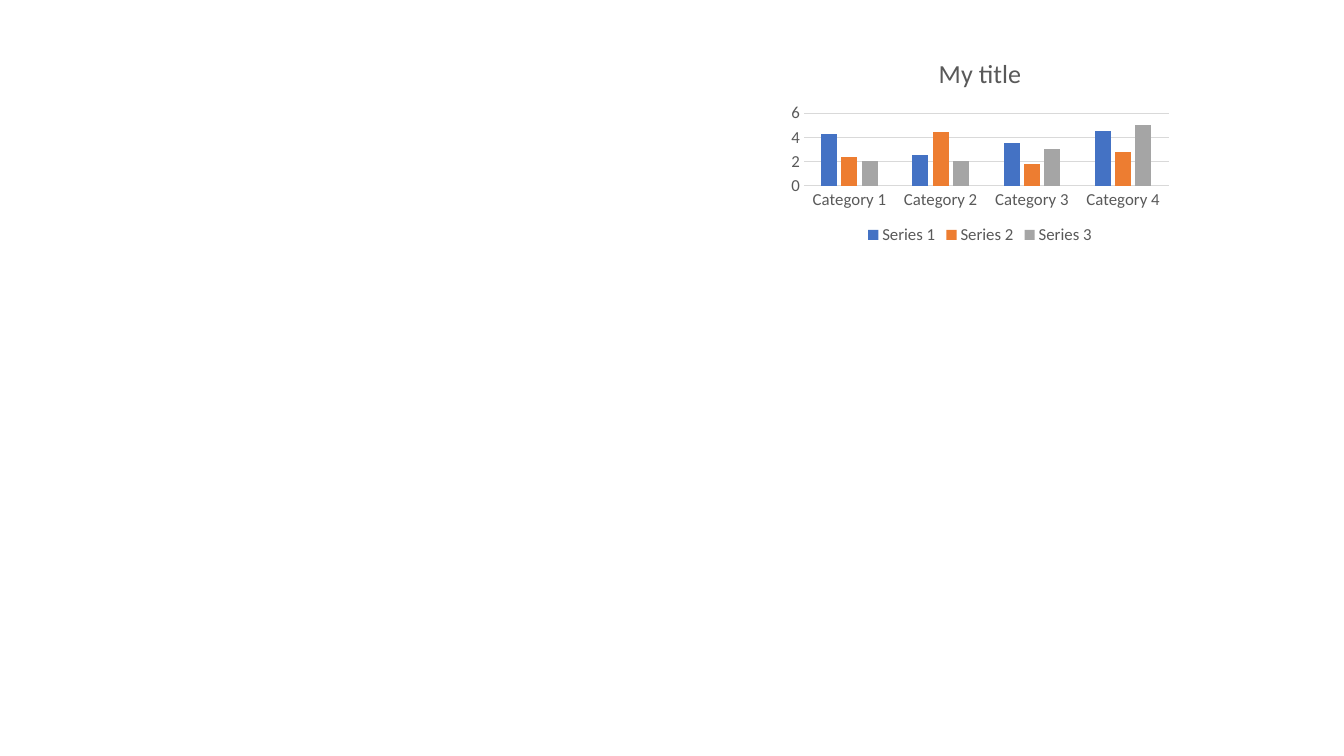
from pptx import Presentation
from pptx.chart.data import CategoryChartData
from pptx.dml.color import RGBColor
from pptx.enum.chart import XL_CHART_TYPE as ChartType
from pptx.enum.chart import XL_LEGEND_POSITION as LegendPosition
from pptx.enum.chart import XL_TICK_MARK as TickMark
from pptx.util import Inches, Pt

THEME = {
    "font": "Calibri",
    "text": RGBColor.from_string("595959"),
    "line": RGBColor.from_string("D9D9D9"),
    "label_size": Pt(12),
    "title_size": Pt(18.6),
    "line_width": Pt(0.75),
}
SERIES = {
    "Series 1": ("4472C4", (4.3, 2.5, 3.5, 4.5)),
    "Series 2": ("ED7D31", (2.4, 4.4, 1.8, 2.8)),
    "Series 3": ("A5A5A5", (2, 2, 3, 5)),
}


def set_values(target, values):
    for name, value in values.items():
        setattr(target, name, value)


def style_font(font, size):
    set_values(font, {"name": THEME["font"], "size": size, "bold": False})
    font.color.rgb = THEME["text"]


presentation = Presentation()
set_values(presentation, {"slide_width": Inches(13.33), "slide_height": Inches(7.5)})
slide = presentation.slides.add_slide(presentation.slide_layouts[6])

chart_data = CategoryChartData()
chart_data.categories = [f"Category {number}" for number in range(1, 5)]
for name, (color, values) in SERIES.items():
    chart_data.add_series(name, values)

chart = slide.shapes.add_chart(
    ChartType.COLUMN_CLUSTERED,
    Inches(7.77), Inches(0.41), Inches(3.9), Inches(2.06),
    chart_data,
).chart
style_font(chart.font, THEME["label_size"])

chart.has_title = True
title = chart.chart_title
title.include_in_layout = False
title.text_frame.text = "My title"
style_font(title.text_frame.paragraphs[0].runs[0].font, THEME["title_size"])

chart.has_legend = True
set_values(chart.legend, {"position": LegendPosition.BOTTOM, "include_in_layout": False})
style_font(chart.legend.font, THEME["label_size"])

plot = chart.plots[0]
set_values(plot, {"gap_width": 219, "overlap": -27, "vary_by_categories": False})
for series, (color, values) in zip(plot.series, SERIES.values()):
    series.invert_if_negative = False
    series.format.fill.solid()
    series.format.fill.fore_color.rgb = RGBColor.from_string(color)

category_axis, value_axis = chart.category_axis, chart.value_axis
for axis in (category_axis, value_axis):
    set_values(axis, {"major_tick_mark": TickMark.NONE, "minor_tick_mark": TickMark.NONE})
    style_font(axis.tick_labels.font, THEME["label_size"])

value_axis.has_major_gridlines = True
value_axis.format.line.fill.background()
for line in (category_axis.format.line, value_axis.major_gridlines.format.line):
    line.color.rgb = THEME["line"]
    line.width = THEME["line_width"]

presentation.save("out.pptx")
